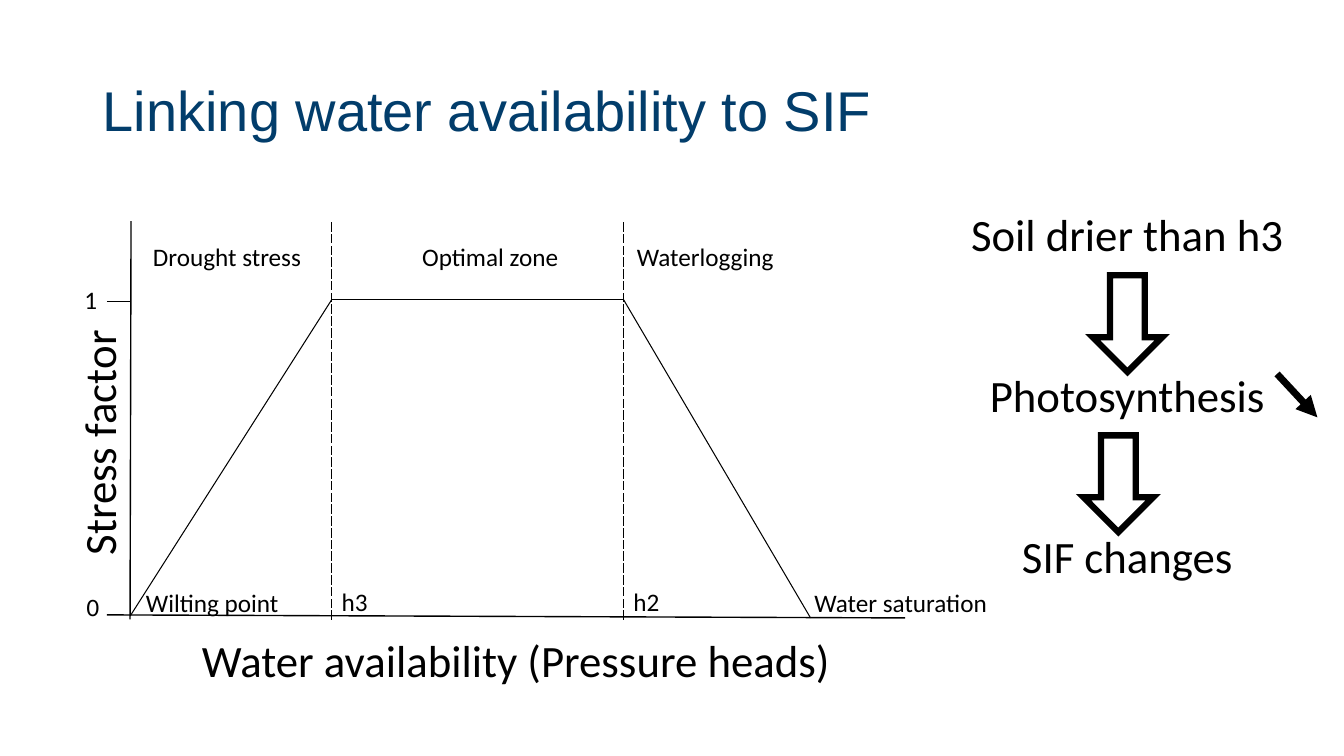
from lxml import etree
from pptx import Presentation
from pptx.dml.color import RGBColor
from pptx.enum.dml import MSO_LINE
from pptx.enum.shapes import MSO_CONNECTOR, MSO_SHAPE
from pptx.enum.text import MSO_ANCHOR, MSO_AUTO_SIZE, PP_ALIGN
from pptx.oxml.ns import qn
from pptx.util import Pt

NAVY = RGBColor(0x02, 0x3D, 0x6B)
BLACK = RGBColor(0, 0, 0)

# Content
TITLE = "Linking water availability to SIF"
CHAIN = ["Soil drier than h3", "Photosynthesis", "SIF changes"]

# Key positions on the diagram
AXIS_X, H3_X, H2_X, SATURATION_X = 93, 237, 445.4, 579
TICK_X, AXIS_END_X = 76.3, 646.6
TOP_Y, ONE_Y, ZERO_Y, BOTTOM_Y = 158, 214, 440, 442.5
ZONE_Y, POINT_Y = 168.5, 416

# text, left, top, width, height, size, rotation
LABELS = [
    ("Stress factor", -21.6, 288.7, 184.3, 46.1, 32, 270),
    ("Water availability (Pressure heads)", 137.2, 448.5, 468.7, 46.1, 32, 0),
    ("Drought stress", 102.2, ZONE_Y, 121.7, 28.8, 18, 0),
    ("Optimal zone", 294.5, ZONE_Y, 113, 28.8, 18, 0),
    ("Waterlogging", 447.8, ZONE_Y, 113, 28.8, 18, 0),
    ("Wilting point", 97.2, POINT_Y, 110.2, 28.8, 18, 0),
    ("Water saturation", 574.6, POINT_Y, 139, 28.8, 18, 0),
    ("1", 53.3, 199.4, 23.8, 28.8, 18, 0),
    ("0", 54.7, 419, 23.8, 28.8, 18, 1),
]
ZONE_BORDERS = [("h3", H3_X), ("h2", H2_X)]
AXES = [
    ((93.6, TOP_Y), (92.9, BOTTOM_Y)),
    ((TICK_X, 439.2), (AXIS_END_X, 441.4)),
    ((TICK_X, 215.3), (AXIS_X, 215.3)),
]
CURVE = [(AXIS_X, ZERO_Y), (H3_X, ONE_Y), (H2_X, ONE_Y), (SATURATION_X, 441.4)]
DOWN_ARROWS = [(780.5, 196.6), (774, 311)]

deck = Presentation()
deck.slide_width, deck.slide_height = Pt(960), Pt(540)
page = deck.slides.add_slide(deck.slide_layouts[5])


def place(shape, left, top, width, height):
    shape.left, shape.top = Pt(left), Pt(top)
    shape.width, shape.height = Pt(width), Pt(height)


def style(para, font_name, size, color):
    for span in para.runs:
        span.font.name = font_name
        span.font.size = Pt(size)
        span.font.color.rgb = color


def add_text(text, left, top, width, height, size, wrap=False):
    box = page.shapes.add_textbox(Pt(left), Pt(top), Pt(width), Pt(height))
    frame = box.text_frame
    frame.text = text
    frame.word_wrap = wrap
    frame.auto_size = MSO_AUTO_SIZE.SHAPE_TO_FIT_TEXT
    for para in frame.paragraphs:
        style(para, "Calibri", size, BLACK)
    return box


def add_line(start, end, weight):
    line = page.shapes.add_connector(
        MSO_CONNECTOR.STRAIGHT, Pt(start[0]), Pt(start[1]), Pt(end[0]), Pt(end[1]))
    line.line.color.rgb = BLACK
    line.line.width = Pt(weight)
    etree.SubElement(line._element.spPr, qn("a:effectLst"))
    return line


# Title
title = page.shapes.title
place(title, 66.2, 28.8, 828, 104.4)
title.text_frame.text = TITLE
title.text_frame.vertical_anchor = MSO_ANCHOR.MIDDLE
heading = title.text_frame.paragraphs[0]
heading.alignment = PP_ALIGN.LEFT
heading.line_spacing = 0.9
style(heading, "Arial", 40, NAVY)

# Cause and effect chain
chain = add_text("\n".join(CHAIN), 683.3, 144, 244, 278.6, 32, wrap=True)
for index, para in enumerate(chain.text_frame.paragraphs):
    para.alignment = PP_ALIGN.CENTER
    if index:
        para.space_before = Pt(76.7)

for left, top in DOWN_ARROWS:
    arrow = page.shapes.add_shape(
        MSO_SHAPE.DOWN_ARROW, Pt(left), Pt(top), Pt(49.7), Pt(69.1))
    arrow.shadow.inherit = False
    arrow.fill.background()
    arrow.line.color.rgb = BLACK
    arrow.line.width = Pt(4.5)
    etree.SubElement(arrow.line._get_or_add_ln(), qn("a:miter"), lim="800000")

decrease = add_line((912.2, 267.1), (941, 298.1), 5)
etree.SubElement(decrease.line._get_or_add_ln(), qn("a:tailEnd"), type="triangle")

# Axes and stress curve
for start, end in AXES:
    add_line(start, end, 1)
for start, end in zip(CURVE, CURVE[1:]):
    add_line(start, end, 0.75)

# Zone borders as dashed hairlines, each with its name
for name, border_x in ZONE_BORDERS:
    border = add_line((border_x, TOP_Y + 1), (border_x, BOTTOM_Y), 0)
    border.line.dash_style = MSO_LINE.LONG_DASH
    # A zero width has to be written out, or the theme width applies
    border.line._get_or_add_ln().set("w", "0")
    add_text(name, border_x, POINT_Y - 0.6, 56.2, 28.8, 18, wrap=True)

# Diagram labels
for *label, rotation in LABELS:
    add_text(*label).rotation = rotation

deck.save("out.pptx")
